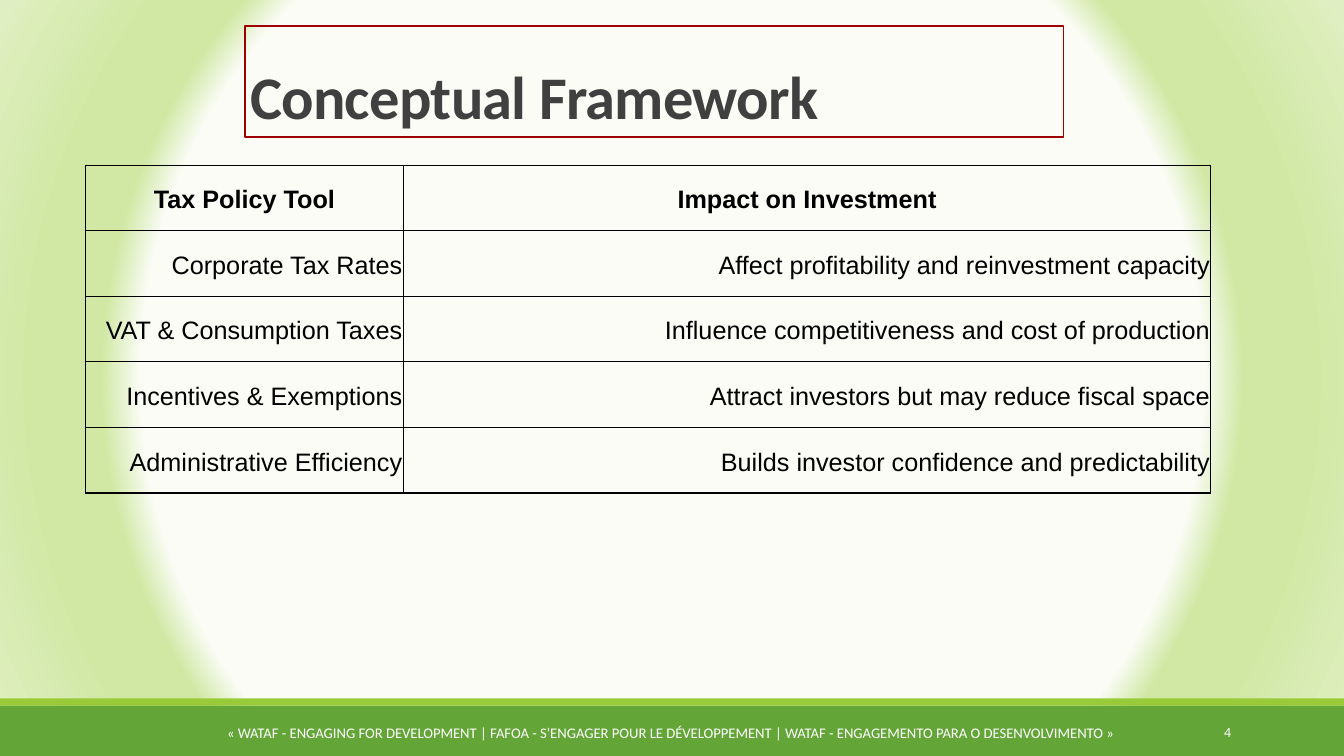
from pptx import Presentation
from pptx.dml.color import RGBColor
from pptx.enum.shapes import MSO_SHAPE
from pptx.enum.text import MSO_ANCHOR, PP_ALIGN
from pptx.oxml import parse_xml
from pptx.oxml.ns import nsdecls, qn
from pptx.util import Inches, Pt

COLORS = {
    "band": "63A537", "stripe": "99CB38", "frame": "9E0000", "title": "404040",
    "black": "000000", "white": "FFFFFF",
}
BACKGROUND_STOPS = [(69, "FAFCF5"), (74, "D1E8A5"), (83, "D1E8A5"), (100, "E0EFC3")]
BARS = [("band", 7, 0.5), ("stripe", 6.93, 0.07)]
TITLE = "Conceptual Framework"
FOOTER = (
    "«\u00a0WATAF - ENGAGING FOR DEVELOPMENT | FAFOA - S’ENGAGER POUR LE DÉVELOPPEMENT"
    " | WATAF - ENGAGEMENTO PARA O DESENVOLVIMENTO\u00a0»"
)
PAGE_NUMBER = "4"
TABLE_ROWS = [
    ("Tax Policy Tool", "Impact on Investment"),
    ("Corporate Tax Rates", "Affect profitability and reinvestment capacity"),
    ("VAT & Consumption Taxes", "Influence competitiveness and cost of production"),
    ("Incentives & Exemptions", "Attract investors but may reduce fiscal space"),
    ("Administrative Efficiency", "Builds investor confidence and predictability"),
]
COLUMN_WIDTHS = [3.15, 8.01]
ROW_HEIGHT = 0.65
SLIDE_WIDTH, SLIDE_HEIGHT = 13.33, 7.5


def set_attributes(target, values):
    for name, value in values.items():
        setattr(target, name, value)


def write_text(paragraph, text, color, font, layout):
    set_attributes(paragraph, layout)
    run = paragraph.add_run()
    run.text = text
    set_attributes(run.font, font)
    run.font.color.rgb = RGBColor.from_string(COLORS[color])
    return run


def margins(size):
    return {f"margin_{side}": Inches(size) for side in ("left", "top", "right", "bottom")}


def add_text(slide, box, text, color, font, layout, anchor):
    shape = slide.shapes.add_textbox(*map(Inches, box))
    frame = {"word_wrap": True, "vertical_anchor": anchor, **margins(0.05)}
    set_attributes(shape.text_frame, frame)
    run = write_text(shape.text_frame.paragraphs[0], text, color, font, layout)
    return shape, run


def paint_background(slide):
    slide.background.fill.gradient()
    gradient = slide.element.find(".//" + qn("a:gradFill"))
    stops = "".join(
        f'<a:gs pos="{position * 1000}"><a:srgbClr val="{color}"/></a:gs>'
        for position, color in BACKGROUND_STOPS
    )
    radial = parse_xml(
        f'<a:gradFill {nsdecls("a")} rotWithShape="1"><a:gsLst>{stops}</a:gsLst>'
        '<a:path path="circle"><a:fillToRect l="50000" t="50000" r="50000" b="50000"/>'
        "</a:path></a:gradFill>"
    )
    gradient.getparent().replace(gradient, radial)


def outline_cell(cell):
    properties = cell._tc.get_or_add_tcPr()
    for index, edge in enumerate(("lnL", "lnR", "lnT", "lnB")):
        border = parse_xml(
            f'<a:{edge} {nsdecls("a")} w="{Pt(1)}"><a:solidFill>'
            f'<a:srgbClr val="{COLORS["black"]}"/></a:solidFill></a:{edge}>'
        )
        properties.insert(index, border)


def add_policy_table(slide):
    size = (sum(COLUMN_WIDTHS), ROW_HEIGHT * len(TABLE_ROWS))
    table = slide.shapes.add_table(
        len(TABLE_ROWS), len(COLUMN_WIDTHS), *map(Inches, (0.85, 1.64, *size))
    ).table
    set_attributes(table, {"first_row": False, "horz_banding": False})
    for column, width in zip(table.columns, COLUMN_WIDTHS):
        column.width = Inches(width)
    for row_index, texts in enumerate(TABLE_ROWS):
        is_header = row_index == 0
        font = {"name": "Arial", "size": Pt(18), "bold": is_header}
        layout = {
            "alignment": PP_ALIGN.CENTER if is_header else PP_ALIGN.RIGHT,
            "line_spacing": 1.15,
            "space_after": Pt(8),
        }
        for column_index, text in enumerate(texts):
            cell = table.cell(row_index, column_index)
            set_attributes(cell, {"vertical_anchor": MSO_ANCHOR.MIDDLE, **margins(0.01)})
            cell.fill.background()
            outline_cell(cell)
            write_text(cell.text_frame.paragraphs[0], text, "black", font, layout)


def main():
    presentation = Presentation()
    set_attributes(presentation, {
        "slide_width": Inches(SLIDE_WIDTH), "slide_height": Inches(SLIDE_HEIGHT),
    })
    slide = presentation.slides.add_slide(presentation.slide_layouts[6])
    paint_background(slide)

    for color, top, height in BARS:
        bar = slide.shapes.add_shape(
            MSO_SHAPE.RECTANGLE, *map(Inches, (0, top, SLIDE_WIDTH, height))
        )
        bar.shadow.inherit = False
        bar.fill.solid()
        bar.fill.fore_color.rgb = RGBColor.from_string(COLORS[color])
        bar.line.fill.background()

    add_text(
        slide, (2.03, 7.13, 9.25, 0.28), FOOTER, "white",
        {"name": "Calibri", "size": Pt(10.5)}, {"alignment": PP_ALIGN.CENTER}, MSO_ANCHOR.TOP,
    )
    title, title_run = add_text(
        slide, (2.43, 0.26, 8.12, 1.1), TITLE, "title",
        {"name": "Calibri", "size": Pt(43.2), "bold": True},
        {"alignment": PP_ALIGN.LEFT, "line_spacing": 0.85}, MSO_ANCHOR.BOTTOM,
    )
    title_run.font._element.set("spc", "-50")
    title.line.color.rgb = RGBColor.from_string(COLORS["frame"])
    title.line.width = Pt(1)

    add_policy_table(slide)
    add_text(
        slide, (12.01, 7.14, 0.25, 0.25), PAGE_NUMBER, "white",
        {"name": "Calibri", "size": Pt(10)}, {"alignment": PP_ALIGN.RIGHT}, MSO_ANCHOR.MIDDLE,
    )
    presentation.save("out.pptx")


if __name__ == "__main__":
    main()
